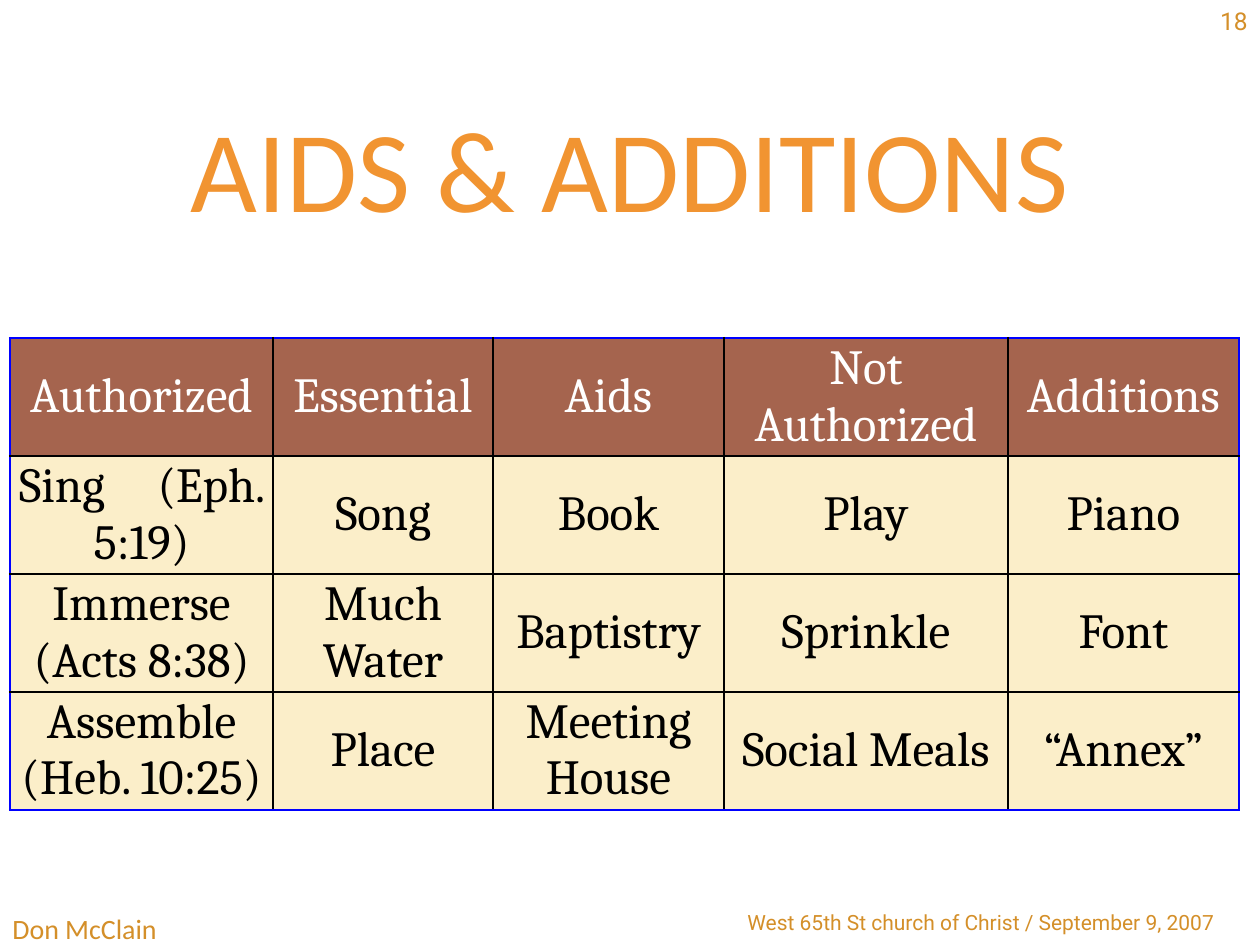
from dataclasses import dataclass

from lxml.etree import SubElement
from pptx import Presentation
from pptx.dml.color import RGBColor as RGB
from pptx.enum.text import MSO_ANCHOR as ANCHOR, PP_ALIGN as ALIGN
from pptx.oxml.ns import qn
from pptx.util import Emu, Pt

PX = 914400 / 126
COLORS = {"header": "A5644E", "body": "FBEEC9", "white": "FFFFFF", "black": "000000",
          "frame": "0000FF", "title": "F19431", "footer": "D48F29"}
TITLE_STOPS = [(0, "F6A75F"), (49, COLORS["title"]), (50, "DF8B0E"),
               (92, "C07B14"), (100, "BD7913")]
COLUMNS = [263, 220, 231, 284, 231]
ROW_HEIGHT = 118
ROWS = [
    ["Authorized", "Essential", "Aids", "Not Authorized", "Additions"],
    ["Sing (Eph. 5:19)", "Song", "Book", "Play", "Piano"],
    ["Immerse (Acts 8:38)", "Much Water", "Baptistry", "Sprinkle", "Font"],
    ["Assemble (Heb. 10:25)", "Place", "Meeting House", "Social Meals", "“Annex”"],
]


@dataclass
class Label:
    text: str
    left: int
    top: int
    width: int
    height: int
    font: str
    size: int
    color: str = "footer"
    align: ALIGN = ALIGN.LEFT


TITLE = Label("AIDS & ADDITIONS", 0, 91, 1260, 152, "Calibri", 66, "title", ALIGN.CENTER)
FOOTERS = [
    Label("West 65th St church of Christ / September 9, 2007", 735, 903, 525, 42, "Roboto", 12),
    Label("Don McClain", 0, 905, 462, 40, "Calibri", 16),
    Label("18", 1155, 0, 105, 34, "Roboto", 14, align=ALIGN.RIGHT),
]


def px(n: int) -> Emu:
    return Emu(round(n * PX))


def style_run(r, font: str, size: int, color: str) -> None:
    r.font.name, r.font.size = font, Pt(size)
    r.font.color.rgb = RGB.from_string(COLORS[color])


def add_label(s, label: Label):
    sp = s.shapes.add_textbox(*map(px, (label.left, label.top, label.width, label.height)))
    tf = sp.text_frame
    tf.word_wrap = True
    tf.text = label.text
    p = tf.paragraphs[0]
    p.alignment = label.align
    style_run(p.runs[0], label.font, label.size, label.color)
    return p.runs[0]


def shade_title(r) -> None:
    """Give the title its vertical gradient."""
    r.font.fill.gradient()
    grad = r.font._element.find(qn("a:gradFill"))
    stops = grad.find(qn("a:gsLst"))
    for stop in list(stops):
        stops.remove(stop)
    for pos, color in TITLE_STOPS:
        stop = SubElement(stops, qn("a:gs"), pos=str(pos * 1000))
        SubElement(stop, qn("a:srgbClr"), val=color)
    grad.find(qn("a:lin")).set("ang", str(90 * 60000))


def set_borders(cell, row: int, col: int) -> None:
    """Frame the table in blue and rule its inside in black."""
    outer = {"L": col == 0, "R": col == len(COLUMNS) - 1,
             "T": row == 0, "B": row == len(ROWS) - 1}
    tc_pr = cell._tc.get_or_add_tcPr()
    for i, (side, on_frame) in enumerate(outer.items()):
        ln = SubElement(tc_pr, qn(f"a:ln{side}"), w=str(Pt(1.5 if on_frame else 1)))
        tc_pr.insert(i, ln)
        fill = SubElement(ln, qn("a:solidFill"))
        SubElement(fill, qn("a:srgbClr"), val=COLORS["frame" if on_frame else "black"])


def fill_cell(cell, text: str, row: int, col: int) -> None:
    header = row == 0
    cell.fill.solid()
    cell.fill.fore_color.rgb = RGB.from_string(COLORS["header" if header else "body"])
    cell.vertical_anchor = ANCHOR.MIDDLE
    cell.margin_left = cell.margin_right = px(8)
    cell.margin_top = cell.margin_bottom = 0
    cell.text_frame.text = text
    p = cell.text_frame.paragraphs[0]
    p.alignment = ALIGN.CENTER
    p.space_before = Pt(18 if header else 12)
    style_run(p.runs[0], "Cambria", 28, "white" if header else "black")
    set_borders(cell, row, col)


def widen_first_space(p) -> None:
    """Open the gap after the first word by letter spacing."""
    first, rest = p.runs[0].text.split(" ", 1)
    p.runs[0].text = first
    for text in (" ", rest):
        r = p.add_run()
        r.text = text
        style_run(r, "Cambria", 28, "black")
    p.runs[1].font._element.set("spc", "2400")


def add_comparison(s) -> None:
    table = s.shapes.add_table(len(ROWS), len(COLUMNS), px(10), px(338), px(sum(COLUMNS)),
                               px(ROW_HEIGHT * len(ROWS))).table
    for column, width in zip(table.columns, COLUMNS):
        column.width = px(width)
    for i, texts in enumerate(ROWS):
        table.rows[i].height = px(ROW_HEIGHT)
        for j, text in enumerate(texts):
            fill_cell(table.cell(i, j), text, i, j)
    widen_first_space(table.cell(1, 0).text_frame.paragraphs[0])


def main() -> None:
    prs = Presentation()
    prs.slide_width, prs.slide_height = px(1260), px(945)
    s = prs.slides.add_slide(prs.slide_layouts[6])
    add_comparison(s)
    shade_title(add_label(s, TITLE))
    for footer in FOOTERS:
        add_label(s, footer)
    prs.save("out.pptx")


if __name__ == "__main__":
    main()
